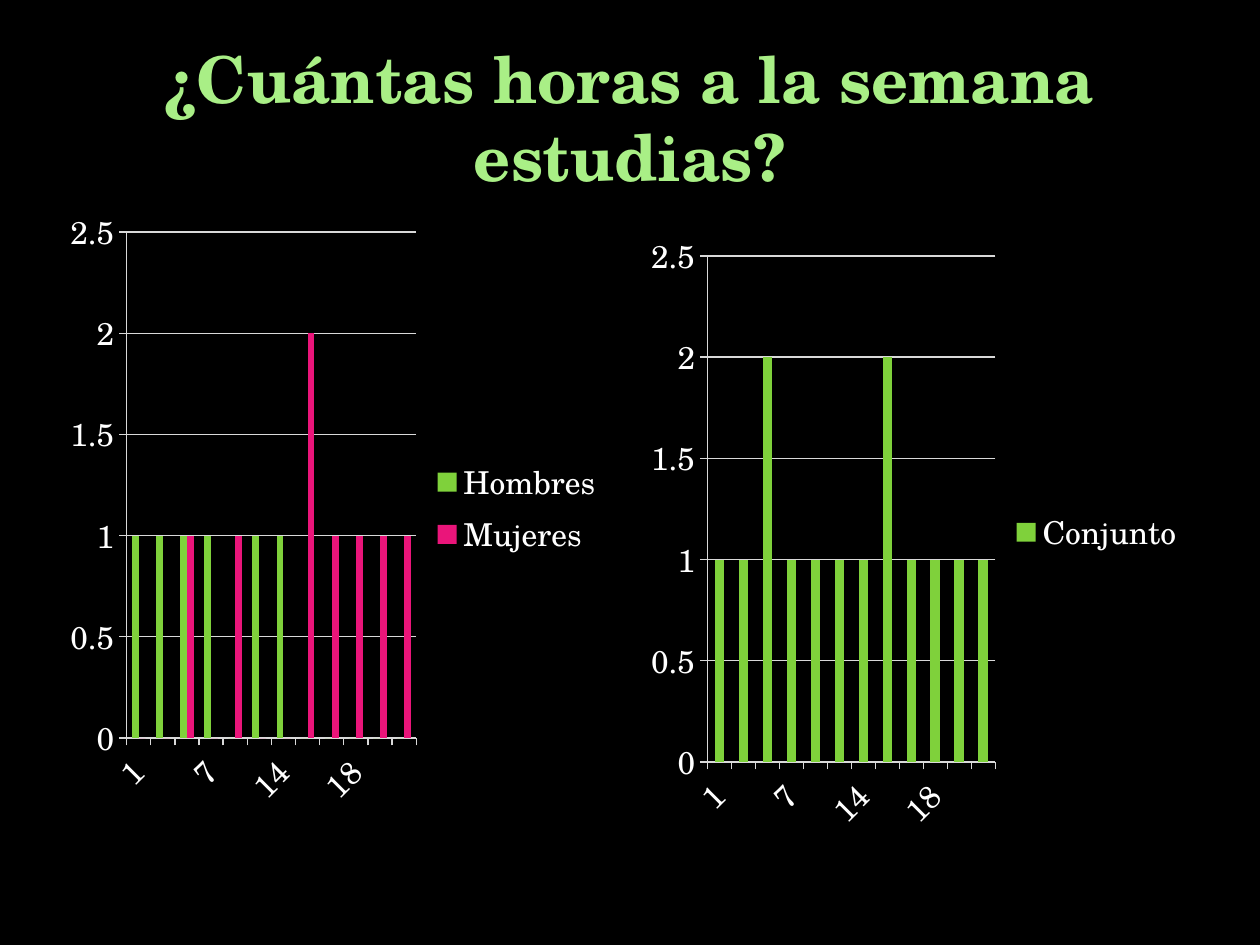
"""Builds a slide with two column charts of weekly study hours."""
from pptx import Presentation
from pptx import util as u
from pptx.chart.data import CategoryChartData
from pptx.dml.color import RGBColor
from pptx.enum import chart as charts, text

FONT = "TeX Gyre Schola"
COLORS = {
    "background": "000000",
    "title": "A9EF86",
    "label": "FFFFFF",
    "line": "D9D9D9",
    "Hombres": "7FD13B",
    "Mujeres": "EA157A",
    "Conjunto": "7FD13B",
}
HOURS = ["1", "3", "5", "7", "12", "13", "14", "15", "16", "18", "19", "21"]
MEN = [1, 1, 1, 1, 0, 1, 1, 0, 0, 0, 0, 0]
WOMEN = [0, 0, 1, 0, 1, 0, 0, 2, 1, 1, 1, 1]
TOTAL = [men + women for men, women in zip(MEN, WOMEN)]


def color(name):
    return RGBColor.from_string(COLORS[name])


def style_font(font, size, name):
    font.name = FONT
    font.size = u.Pt(size)
    font.color.rgb = color(name)


def style_line(line):
    line.color.rgb = color("line")
    line.width = u.Pt(0.75)


def add_title(page, wording):
    box = page.shapes.add_textbox(u.Pt(36), u.Pt(21.6), u.Pt(648), u.Pt(90))
    frame = box.text_frame
    frame.word_wrap = True
    frame.vertical_anchor = text.MSO_ANCHOR.MIDDLE
    para = frame.paragraphs[0]
    para.text = wording
    para.alignment = text.PP_ALIGN.CENTER
    para.font.bold = True
    style_font(para.font, 36.9, "title")


def add_column_chart(page, left, top, series):
    data = CategoryChartData()
    data.categories = HOURS
    for name, values in series.items():
        data.add_series(name, values)
    chart = page.shapes.add_chart(
        charts.XL_CHART_TYPE.COLUMN_CLUSTERED,
        u.Pt(left), u.Pt(top), u.Pt(318.24), u.Pt(356.4), data,
    ).chart
    chart.has_title = False
    style_font(chart.font, 18, "label")
    chart.has_legend = True
    chart.legend.position = charts.XL_LEGEND_POSITION.RIGHT
    chart.legend.include_in_layout = False
    for axis in (chart.category_axis, chart.value_axis):
        axis.major_tick_mark = charts.XL_TICK_MARK.OUTSIDE
        style_line(axis.format.line)
    style_line(chart.value_axis.major_gridlines.format.line)
    plot = chart.plots[0]
    plot.gap_width = 150
    plot.vary_by_categories = False
    for column in plot.series:
        column.format.fill.solid()
        column.format.fill.fore_color.rgb = color(column.name)


def main():
    deck = Presentation()
    deck.slide_width, deck.slide_height = u.Pt(720), u.Pt(540)
    page = deck.slides.add_slide(deck.slide_layouts[6])
    page.background.fill.solid()
    page.background.fill.fore_color.rgb = color("background")
    add_title(page, "¿Cuántas horas a la semana estudias?")
    add_column_chart(page, 33.84, 112.32, {"Hombres": MEN, "Mujeres": WOMEN})
    add_column_chart(page, 365.76, 126, {"Conjunto": TOTAL})
    deck.save("out.pptx")


if __name__ == "__main__":
    main()
